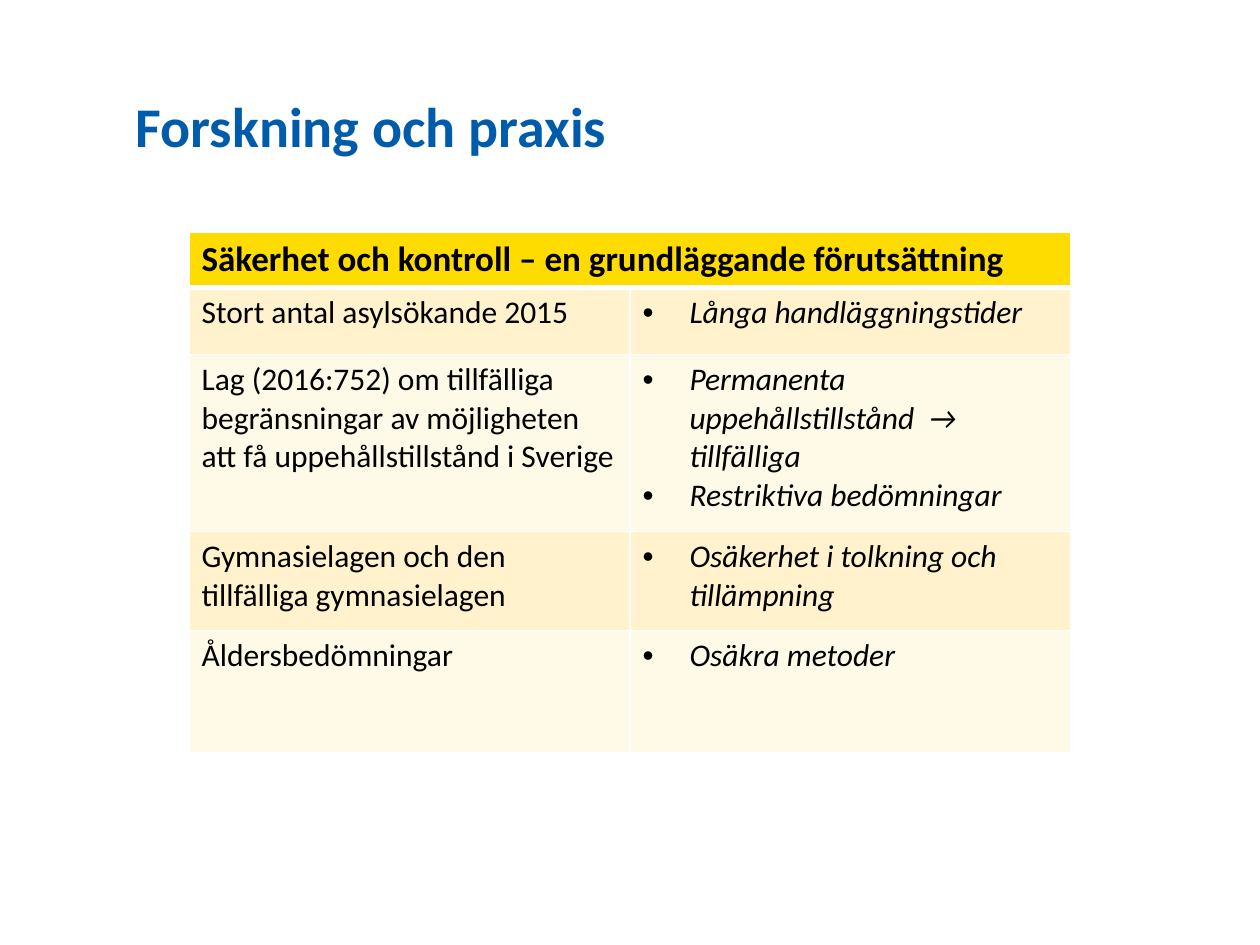
import pptx
import pptx.dml.color
import pptx.enum.text
import pptx.oxml
import pptx.oxml.ns
import pptx.util

PX = 914400 // 126
RGBColor = pptx.dml.color.RGBColor
BLUE = RGBColor(0x00, 0x5C, 0xAA)
YELLOW = RGBColor(0xFF, 0xDC, 0x00)
CREAM = RGBColor(0xFF, 0xF2, 0xCC)
PALE = RGBColor(0xFF, 0xF9, 0xE7)
BLACK = RGBColor(0x00, 0x00, 0x00)
WHITE = RGBColor(0xFF, 0xFF, 0xFF)

HEADING = "Säkerhet och kontroll – en grundläggande förutsättning"
ROWS = [
    ("Stort antal asylsökande 2015", ["Långa handläggningstider"]),
    ("Lag (2016:752) om tillfälliga begränsningar av möjligheten att få uppehållstillstånd i Sverige",
     ["Permanenta uppehållstillstånd  → tillfälliga", "Restriktiva bedömningar"]),
    ("Gymnasielagen och den tillfälliga gymnasielagen", ["Osäkerhet i tolkning och tillämpning"]),
    ("Åldersbedömningar", ["Osäkra metoder"]),
]
ROW_HEIGHTS = [55, 67, 177, 99, 122]
COLUMN_WIDTH = 441
BULLET_INDENT = 47


def style_cell(cell, fill, top=1, bottom=1):
    """Give the cell white borders, widths in points, and a solid fill."""
    properties = cell._tc.get_or_add_tcPr()
    for side, width in (("L", 1), ("R", 1), ("T", top), ("B", bottom)):
        properties.append(pptx.oxml.parse_xml(
            f'<a:ln{side} {pptx.oxml.ns.nsdecls("a")} w="{pptx.util.Pt(width)}">'
            f'<a:solidFill><a:srgbClr val="{WHITE}"/></a:solidFill></a:ln{side}>'))
    cell.fill.solid()
    cell.fill.fore_color.rgb = fill


def write_paragraph(para, text, size, color, bold=False, italic=False):
    para.text = text
    para.font.name = "Calibri"
    para.font.size = pptx.util.Pt(size)
    para.font.color.rgb = color
    para.font.bold = bold
    para.font.italic = italic


deck = pptx.Presentation()
deck.slide_width = 1260 * PX
deck.slide_height = 945 * PX
page = deck.slides.add_slide(deck.slide_layouts[5])

title = page.shapes.title
title.left, title.top, title.width, title.height = 123 * PX, 83 * PX, 1012 * PX, 149 * PX
title.text_frame.vertical_anchor = pptx.enum.text.MSO_ANCHOR.TOP
title.text_frame.margin_top = 9 * PX
write_paragraph(title.text_frame.paragraphs[0], "Forskning och praxis", 32, BLUE, bold=True)
title.text_frame.paragraphs[0].alignment = pptx.enum.text.PP_ALIGN.LEFT

table = page.shapes.add_table(len(ROW_HEIGHTS), 2, 189 * PX, 232 * PX,
                              2 * COLUMN_WIDTH * PX, sum(ROW_HEIGHTS) * PX).table
table.first_row = False
table.horz_banding = False
for column in table.columns:
    column.width = COLUMN_WIDTH * PX
for row, height in zip(table.rows, ROW_HEIGHTS):
    row.height = height * PX

header = table.cell(0, 0)
header.merge(table.cell(0, 1))
for cell in table.rows[0].cells:
    style_cell(cell, YELLOW, bottom=3)
write_paragraph(header.text_frame.paragraphs[0], HEADING, 20, BLACK, bold=True)

for index, (topic, effects) in enumerate(ROWS, start=1):
    for cell in table.rows[index].cells:
        style_cell(cell, CREAM if index % 2 else PALE, top=3 if index == 1 else 1)
    topic_cell, effect_cell = table.rows[index].cells
    write_paragraph(topic_cell.text_frame.paragraphs[0], topic, 18, BLACK)
    for number, effect in enumerate(effects):
        frame = effect_cell.text_frame
        para = frame.add_paragraph() if number else frame.paragraphs[0]
        properties = para._p.get_or_add_pPr()
        properties.set("marL", str(BULLET_INDENT * PX))
        properties.set("indent", str(-BULLET_INDENT * PX))
        for bullet in ('buFont {} typeface="Arial"', 'buChar {} char="•"'):
            properties.append(pptx.oxml.parse_xml(
                f'<a:{bullet.format(pptx.oxml.ns.nsdecls("a"))}/>'))
        write_paragraph(para, effect, 18, BLACK, italic=True)

deck.save("out.pptx")
